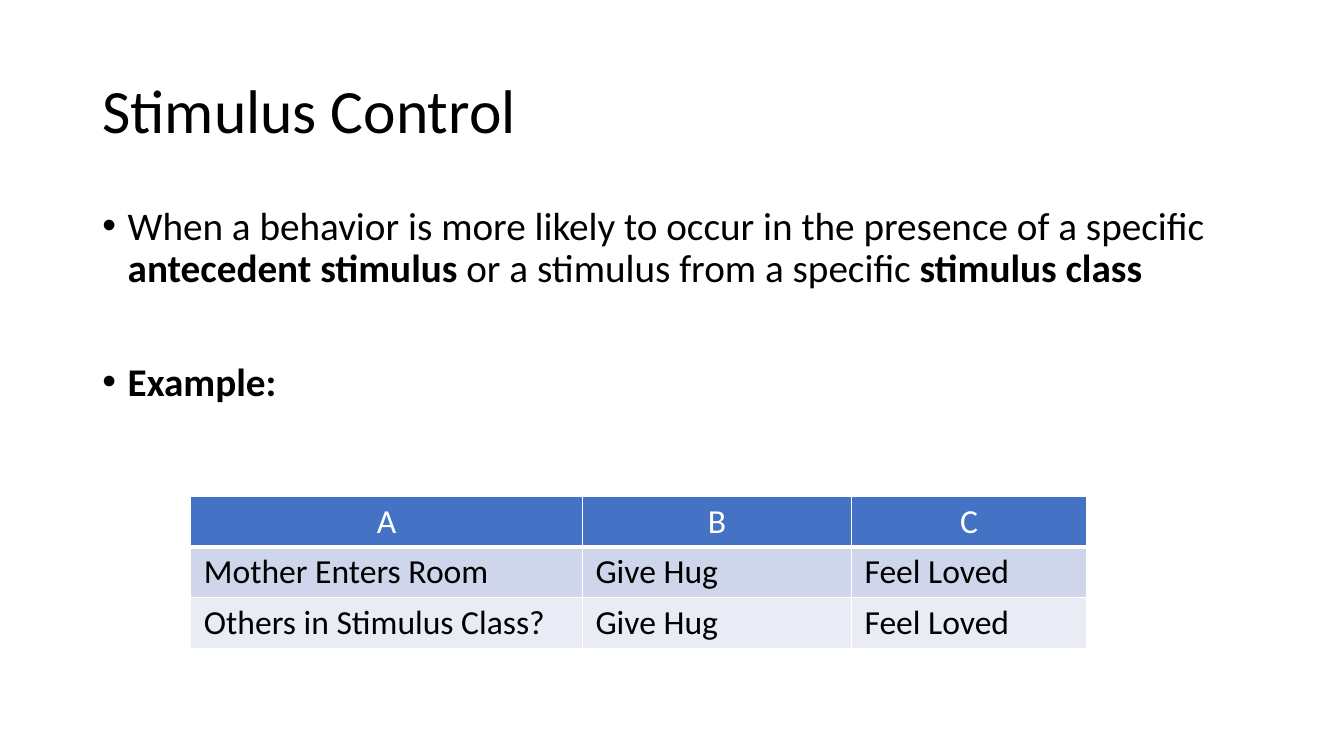
from lxml.etree import SubElement
from pptx import Presentation
from pptx.dml.color import RGBColor
from pptx.enum.text import MSO_ANCHOR as Anchor, PP_ALIGN as Align
from pptx.oxml import parse_xml
from pptx.oxml.ns import nsdecls, qn
from pptx.util import Cm, Pt

FONT = "Calibri"
COLORS = {
    "text": "000000",
    "white": "FFFFFF",
    "header": "4472C4",
    "band_dark": "CFD5EA",
    "band_light": "E9EBF5",
}
DEFINITION = [
    ("When a behavior is more likely to occur in the presence of a specific ", False),
    ("antecedent stimulus ", True),
    ("or a stimulus from a specific ", False),
    ("stimulus class", True),
]
CONTINGENCY = [
    ["A", "B", "C"],
    ["Mother Enters Room", "Give Hug", "Feel Loved"],
    ["Others in Stimulus Class?", "Give Hug", "Feel Loved"],
]
COLUMN_WIDTHS = [9.87, 6.78, 5.93]


def color(name):
    return RGBColor.from_string(COLORS[name])


def add_span(para, text, size=28, bold=False, ink="text"):
    span = para.add_run()
    span.text = text
    span.font.name = FONT
    span.font.size = Pt(size)
    span.font.bold = bold
    span.font.color.rgb = color(ink)


def add_text_frame(page, left, top, width, height, anchor=Anchor.TOP):
    box = page.shapes.add_textbox(Cm(left), Cm(top), Cm(width), Cm(height))
    frame = box.text_frame
    frame.word_wrap = True
    frame.vertical_anchor = anchor
    return frame


def add_title(page, left, top, width, height):
    frame = add_text_frame(page, left, top, width, height, Anchor.MIDDLE)
    para = frame.paragraphs[0]
    para.line_spacing = 0.9
    add_span(para, "Stimulus Control", size=44)


def add_bullet(para, spans, space_before):
    para.line_spacing = 0.9
    para.space_before = Pt(space_before)
    properties = para._p.get_or_add_pPr()
    properties.set("marL", str(Cm(0.64)))
    properties.set("indent", str(Cm(-0.64)))
    SubElement(properties, qn("a:buFont"), typeface="Arial")
    SubElement(properties, qn("a:buChar"), char="•")
    for text, bold in spans:
        add_span(para, text, bold=bold)


def add_body(page, left, top, width, height):
    frame = add_text_frame(page, left, top, width, height)
    add_bullet(frame.paragraphs[0], DEFINITION, space_before=10)
    add_bullet(frame.add_paragraph(), [("Example:", True)], space_before=51)


def set_borders(cell, bottom):
    properties = cell._tc.get_or_add_tcPr()
    sides = {"L": 1, "R": 1, "T": 1, "B": bottom}
    for index, (side, points) in enumerate(sides.items()):
        properties.insert(index, parse_xml(
            f'<a:ln{side} {nsdecls("a")} w="{Pt(points)}"><a:solidFill>'
            f'<a:srgbClr val="{COLORS["white"]}"/></a:solidFill></a:ln{side}>'))


def fill_cell(cell, text, fill, ink="text", align=Align.LEFT, bottom=1):
    cell.margin_left = cell.margin_right = Cm(0.33)
    cell.margin_top = cell.margin_bottom = Cm(0.13)
    cell.fill.solid()
    cell.fill.fore_color.rgb = color(fill)
    set_borders(cell, bottom)
    para = cell.text_frame.paragraphs[0]
    para.alignment = align
    add_span(para, text, size=24, ink=ink)


def add_contingency_table(page, left, top, width, height):
    frame = page.shapes.add_table(len(CONTINGENCY), len(COLUMN_WIDTHS),
                                  Cm(left), Cm(top), Cm(width), Cm(height))
    table = frame.table
    for column, column_width in zip(table.columns, COLUMN_WIDTHS):
        column.width = Cm(column_width)
    for row, texts in enumerate(CONTINGENCY):
        for column, text in enumerate(texts):
            cell = table.cell(row, column)
            if row == 0:
                fill_cell(cell, text, "header", ink="white", align=Align.CENTER, bottom=3)
            else:
                fill_cell(cell, text, "band_dark" if row % 2 else "band_light")


def main():
    deck = Presentation()
    deck.slide_width, deck.slide_height = Cm(33.87), Cm(19.05)
    page = deck.slides.add_slide(deck.slide_layouts[6])
    add_title(page, 2.33, 1.01, 29.21, 3.68)
    add_body(page, 2.33, 5.07, 29.21, 12.09)
    add_contingency_table(page, 4.81, 12.5, sum(COLUMN_WIDTHS), 3.81)
    deck.save("out.pptx")


if __name__ == "__main__":
    main()
